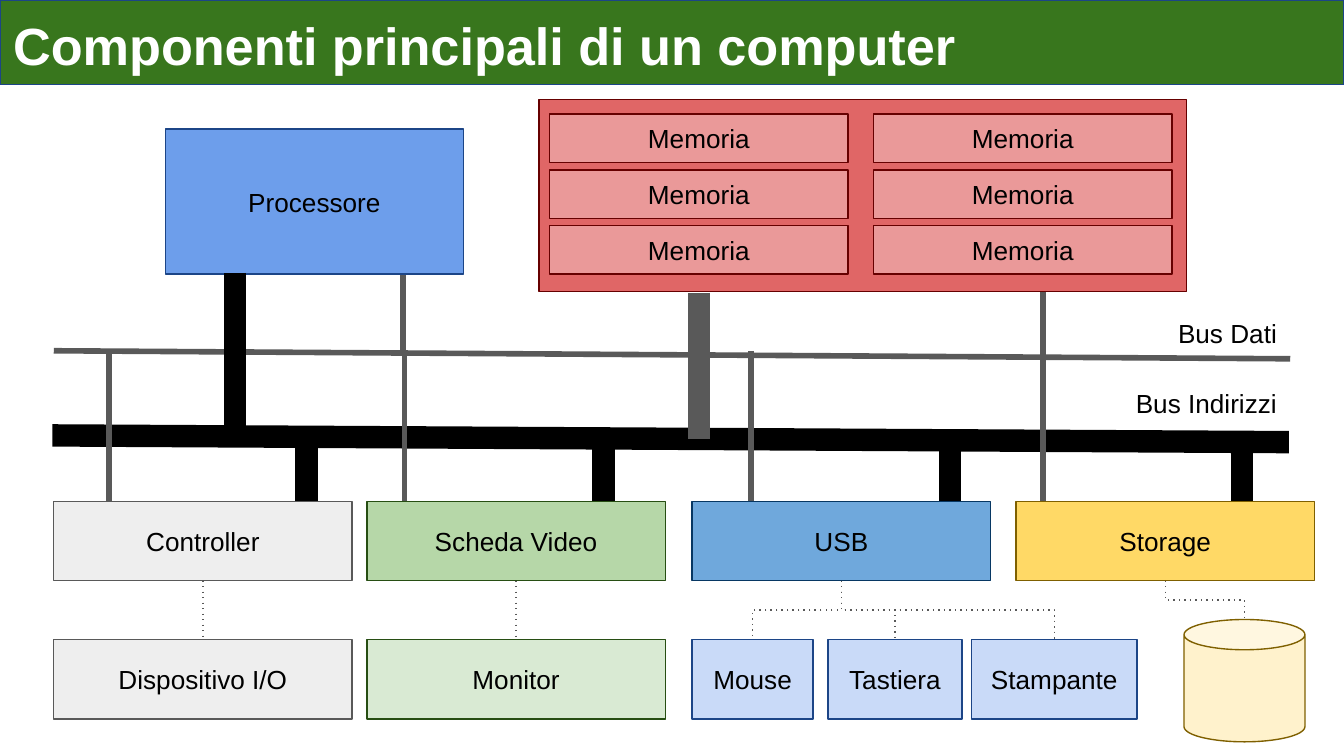
from pptx import Presentation
from pptx.dml.color import RGBColor
from pptx.enum.dml import MSO_LINE
from pptx.enum.shapes import MSO_CONNECTOR, MSO_SHAPE
from pptx.enum.text import MSO_ANCHOR, PP_ALIGN
from pptx.oxml.ns import qn
from pptx.util import Inches, Pt
from lxml.etree import SubElement

COLORS = {
    "black": "000000", "white": "FFFFFF", "gray": "595959", "pale": "EEEEEE",
    "title": "38761D", "navy": "1C4587", "cpu": "6D9EEB", "bank": "E06666",
    "memory": "EA9999", "wine": "660000", "video": "B6D7A8", "screen": "D9EAD3",
    "forest": "274E13", "usb": "6FA8DC", "deep": "073763", "device": "C9DAF8",
    "storage": "FFD966", "disk": "FFF2CC", "brown": "7F6000",
}

TITLE = "Componenti principali di un computer"
WIDE, TALL = 2.22, 0.59
CARD_Y, DEVICE_Y = 3.73, 4.76
DATA_Y, ADDRESS_Y = 2.61, 3.29

# Card: text, left, fill, edge, data line x, address line x
CARDS = [
    ("Controller", 0.4, "pale", "gray", 0.81, 2.28),
    ("Scheda Video", 2.73, "video", "forest", 3.01, 4.49),
    ("USB", 5.15, "usb", "deep", 5.59, 7.07),
    ("Storage", 7.56, "storage", "brown", 7.76, 9.24),
]
# Device: text, left, width, fill, edge, card it hangs from
DEVICES = [
    ("Dispositivo I/O", 0.4, WIDE, "pale", "gray", "Controller"),
    ("Monitor", 2.73, WIDE, "screen", "forest", "Scheda Video"),
    ("Mouse", 5.15, 0.9, "device", "navy", "USB"),
    ("Tastiera", 6.16, 1, "device", "navy", "USB"),
    ("Stampante", 7.23, 1.23, "device", "navy", "USB"),
]
# Bus lines: x1, y1, x2, y2, color, weight
BUSES = [
    (0.39, 3.24, 9.59, 3.29, "black", 12),
    (0.4, 2.61, 9.6, 2.67, "gray", 3),
    (1.75, 2.03, 1.75, 3.2, "black", 12),
    (5.2, 2.18, 5.2, 3.27, "gray", 12),
    (3, 2.05, 3, 2.64, "gray", 3),
    (7.76, 2.17, 7.76, 2.66, "gray", 3),
]
LABELS = [("Bus Dati", 8.19, 2.26, 1.41), ("Bus Indirizzi", 8.08, 2.78, 1.52)]

deck = Presentation()
deck.slide_width = Inches(10)
deck.slide_height = deck.slide_width * 9 // 16
slide = deck.slides.add_slide(deck.slide_layouts[6])
shapes = slide.shapes


def color(name):
    return RGBColor.from_string(COLORS[name])


def write(shape, text, align=PP_ALIGN.CENTER, size=14, ink="black", bold=False):
    frame = shape.text_frame
    frame.word_wrap = True
    frame.vertical_anchor = MSO_ANCHOR.MIDDLE
    frame.margin_left = frame.margin_right = Inches(0.1)
    frame.margin_top = frame.margin_bottom = Inches(0.1)
    frame.text = text
    para = frame.paragraphs[0]
    para.alignment = align
    font = para.runs[0].font
    font.name, font.size, font.bold = "Arial", Pt(size), bold
    font.color.rgb = color(ink)


def box(x, y, w, h, fill, edge, text="", kind=MSO_SHAPE.RECTANGLE, **style):
    shape = shapes.add_shape(kind, Inches(x), Inches(y), Inches(w), Inches(h))
    shape.shadow.inherit = False
    shape.fill.solid()
    shape.fill.fore_color.rgb = color(fill)
    shape.line.color.rgb = color(edge)
    shape.line.width = Pt(0.75)
    if text:
        write(shape, text, **style)
    return shape


def line(x1, y1, x2, y2, ink, weight, kind=MSO_CONNECTOR.STRAIGHT):
    wire = shapes.add_connector(kind, Inches(x1), Inches(y1), Inches(x2), Inches(y2))
    wire.line.color.rgb = color(ink)
    wire.line.width = Pt(weight)
    SubElement(wire._element.spPr, qn("a:effectLst"))
    return wire


def link(card, device, site=0):
    """Dotted line from a card's bottom to a device's top."""
    x1, y1 = card.left + card.width // 2, card.top + card.height
    x2, y2 = device.left + device.width // 2, device.top
    bent = x1 != x2
    kind = MSO_CONNECTOR.ELBOW if bent else MSO_CONNECTOR.STRAIGHT
    wire = line(0, 0, 1, 1, "gray", 0.75, kind)
    wire.line.dash_style = MSO_LINE.ROUND_DOT
    dash = wire._element.spPr.find(qn("a:ln")).find(qn("a:prstDash"))
    dash.set("val", "dot")  # wider gaps than the round dot
    wire.begin_connect(card, 2)
    wire.end_connect(device, site)
    if bent:  # turn the elbow so that it leaves downwards
        run, drop = abs(x2 - x1), y2 - y1
        wire.left, wire.top = (x1 + x2 - drop) // 2, (y1 + y2 - run) // 2
        wire.width, wire.height = drop, run
        turn = wire._element.spPr.find(qn("a:xfrm"))
        turn.set("rot", str((90 if x2 < x1 else 270) * 60000))
        turn.set("flipH", "0" if x2 < x1 else "1")
        turn.set("flipV", "0")


# Memory bank and title bar
box(4.01, 0.74, 4.82, 1.43, "bank", "wine")
bar = box(0, 0, 10, 0.63, "title", "navy", TITLE,
          align=PP_ALIGN.LEFT, size=28, ink="white", bold=True)
bar.text_frame.vertical_anchor = MSO_ANCHOR.TOP

# Processor and memory
box(1.23, 0.96, WIDE, 1.08, "cpu", "navy", "Processore")
for x in (4.09, 6.5):
    for row in range(3):
        box(x, 0.85 + row * 0.415, WIDE, 0.36, "memory", "wine", "Memoria")

# Buses
for bus in BUSES:
    line(*bus)

# Cards with their bus drops
cards = {}
for text, x, fill, edge, data, address in CARDS:
    cards[text] = box(x, CARD_Y, WIDE, TALL, fill, edge, text)
    line(address, ADDRESS_Y, address, CARD_Y, "black", 12)
    line(data, DATA_Y, data, CARD_Y, "gray", 3)

# Devices below the cards
for text, x, w, fill, edge, card in DEVICES:
    link(cards[card], box(x, DEVICE_Y, w, TALL, fill, edge, text))
disk = box(8.81, 4.61, 0.9, 0.91, "disk", "brown", kind=MSO_SHAPE.CAN)
link(cards["Storage"], disk, 1)  # site 1 of a can is its top

# Bus labels
for text, x, y, w in LABELS:
    label = shapes.add_textbox(Inches(x), Inches(y), Inches(w), Inches(0.44))
    write(label, text, PP_ALIGN.RIGHT)

deck.save("out.pptx")
